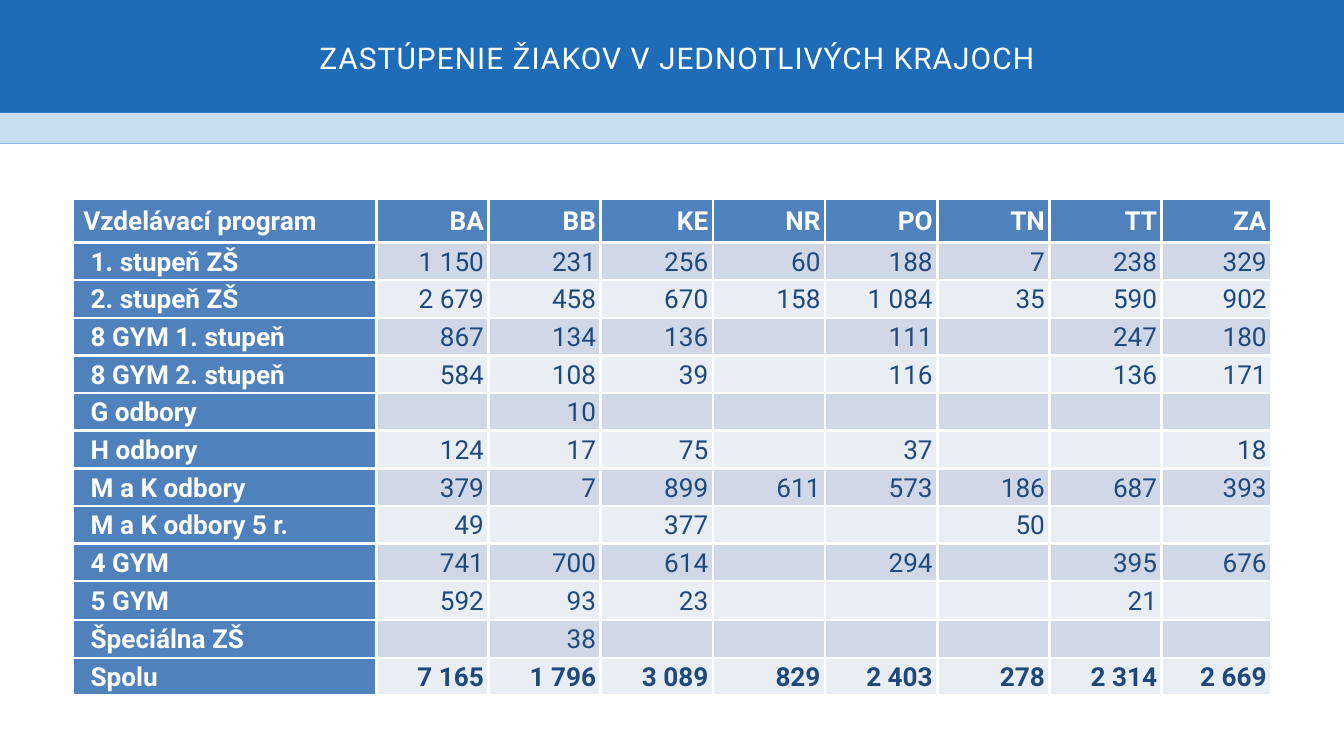
from dataclasses import dataclass

from lxml.etree import SubElement
from pptx import Presentation
from pptx.dml.color import RGBColor
from pptx.enum.shapes import MSO_SHAPE
from pptx.enum.text import MSO_ANCHOR, PP_ALIGN
from pptx.oxml.ns import qn
from pptx.util import Inches, Pt


@dataclass(frozen=True)
class Theme:
    font: str = "Roboto"
    banner: str = "1E6BB8"
    stripe: str = "C8DFF1"
    heading: str = "4F81BD"
    bands: tuple = ("D0D8E8", "E9EDF4")
    number: str = "1F497D"
    white: str = "FFFFFF"
    title_size: int = 32
    table_size: int = 28
    border_width: int = 3


REGIONS = ["BA", "BB", "KE", "NR", "PO", "TN", "TT", "ZA"]
PROGRAMS = [
    ("1. stupeň ZŠ", ["1 150", "231", "256", "60", "188", "7", "238", "329"]),
    ("2. stupeň ZŠ", ["2 679", "458", "670", "158", "1 084", "35", "590", "902"]),
    ("8 GYM 1. stupeň", ["867", "134", "136", "", "111", "", "247", "180"]),
    ("8 GYM 2. stupeň", ["584", "108", "39", "", "116", "", "136", "171"]),
    ("G odbory", ["", "10", "", "", "", "", "", ""]),
    ("H odbory", ["124", "17", "75", "", "37", "", "", "18"]),
    ("M a K odbory", ["379", "7", "899", "611", "573", "186", "687", "393"]),
    ("M a K odbory 5 r.", ["49", "", "377", "", "", "50", "", ""]),
    ("4 GYM", ["741", "700", "614", "", "294", "", "395", "676"]),
    ("5 GYM", ["592", "93", "23", "", "", "", "21", ""]),
    ("Špeciálna ZŠ", ["", "38", "", "", "", "", "", ""]),
    ("Spolu", ["7 165", "1 796", "3 089", "829", "2 403", "278", "2 314", "2 669"]),
]
COLUMN_WIDTHS = [4.52] + [1.67] * 7 + [1.63]
ROW_HEIGHTS = [0.65] + [0.56] * 9 + [0.58] + [0.56] * 2


def write_text(frame, text, *, font, size, color, bold=False,
               align=PP_ALIGN.LEFT, line_spacing=None, tracking=None):
    paragraph = frame.paragraphs[0]
    paragraph.alignment = align
    paragraph.line_spacing = line_spacing
    run = paragraph.add_run()
    run.text = text
    run.font.name = font
    run.font.size = Pt(size)
    run.font.bold = bold
    run.font.color.rgb = RGBColor.from_string(color)
    if tracking:
        run._r.get_or_add_rPr().set("spc", str(round(tracking * 100)))


class SlideBuilder:
    def __init__(self, slide, theme):
        self.slide = slide
        self.theme = theme

    def bar(self, left, top, width, height, color):
        bar = self.slide.shapes.add_shape(
            MSO_SHAPE.RECTANGLE, Inches(left), Inches(top), Inches(width), Inches(height))
        bar.shadow.inherit = False
        bar.fill.solid()
        bar.fill.fore_color.rgb = RGBColor.from_string(color)
        bar.line.fill.background()

    def title(self, text, left, top, width, height):
        box = self.slide.shapes.add_textbox(
            Inches(left), Inches(top), Inches(width), Inches(height))
        frame = box.text_frame
        frame.word_wrap = True
        frame.margin_left = frame.margin_right = frame.margin_top = frame.margin_bottom = 0
        write_text(frame, text, font=self.theme.font, size=self.theme.title_size,
                   color=self.theme.white, align=PP_ALIGN.CENTER,
                   line_spacing=Pt(50.4), tracking=1.1)

    def borders(self, cell):
        properties = cell._tc.get_or_add_tcPr()
        for side in ("a:lnL", "a:lnR", "a:lnT", "a:lnB"):
            line = SubElement(properties, qn(side), w=str(Pt(self.theme.border_width)))
            fill = SubElement(line, qn("a:solidFill"))
            SubElement(fill, qn("a:srgbClr"), val=self.theme.white)

    def cell(self, cell, text, fill, color, bold, align, indent=0):
        self.borders(cell)
        cell.fill.solid()
        cell.fill.fore_color.rgb = RGBColor.from_string(fill)
        cell.vertical_anchor = MSO_ANCHOR.MIDDLE
        cell.margin_left = Inches(0.07 + indent)
        cell.margin_right = Inches(0.07)
        cell.margin_top = cell.margin_bottom = 0
        if text:
            write_text(cell.text_frame, text, font=self.theme.font,
                       size=self.theme.table_size, color=color, bold=bold,
                       align=align, line_spacing=1.07)

    def table(self, rows, left, top):
        theme = self.theme
        table = self.slide.shapes.add_table(
            len(rows), len(COLUMN_WIDTHS), Inches(left), Inches(top),
            Inches(sum(COLUMN_WIDTHS)), Inches(sum(ROW_HEIGHTS))).table
        for column, width in zip(table.columns, COLUMN_WIDTHS):
            column.width = Inches(width)
        for row, height in zip(table.rows, ROW_HEIGHTS):
            row.height = Inches(height)

        for r, (program, values) in enumerate(rows):
            is_header, is_total = r == 0, r == len(rows) - 1
            self.cell(table.cell(r, 0), program, theme.heading, theme.white, True,
                      PP_ALIGN.LEFT, indent=0.09 if is_header else 0.2)
            fill = theme.heading if is_header else theme.bands[(r - 1) % 2]
            color = theme.white if is_header else theme.number
            for c, value in enumerate(values, start=1):
                self.cell(table.cell(r, c), value, fill, color,
                          is_header or is_total, PP_ALIGN.RIGHT)


def main():
    presentation = Presentation()
    presentation.slide_width = Inches(20)
    presentation.slide_height = Inches(11.25)
    theme = Theme()
    builder = SlideBuilder(
        presentation.slides.add_slide(presentation.slide_layouts[6]), theme)

    # Banner with title
    builder.bar(-0.58, -0.1, 21.17, 2.24, theme.banner)
    builder.bar(-0.66, 1.68, 21.17, 0.46, theme.stripe)
    builder.title("ZASTÚPENIE ŽIAKOV V JEDNOTLIVÝCH KRAJOCH", 0.16, 0.42, 19.84, 0.64)

    # Pupils by programme and region
    builder.table([("Vzdelávací program", REGIONS)] + PROGRAMS, 1.08, 2.96)

    presentation.save("out.pptx")


if __name__ == "__main__":
    main()
